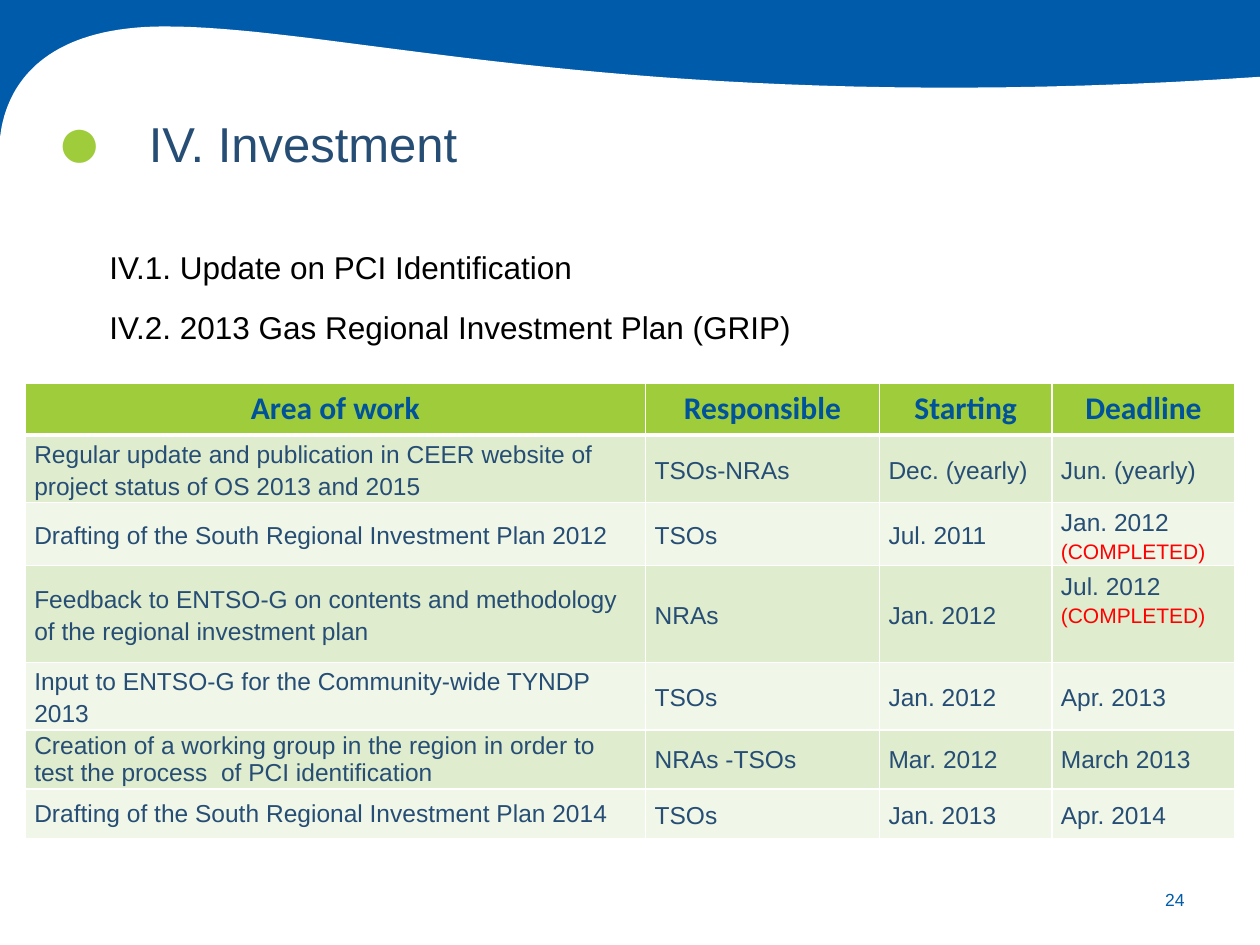
"""Build the Investment work plan slide with its schedule table."""
from lxml.etree import SubElement
from pptx import Presentation
from pptx.dml.color import RGBColor
from pptx.enum.shapes import MSO_SHAPE
from pptx.enum.text import MSO_ANCHOR, PP_ALIGN
from pptx.oxml.ns import qn
from pptx.util import Pt

BLUE = RGBColor(0x00, 0x5B, 0xAB)
HEADER_BLUE = RGBColor(0x00, 0x52, 0x9B)
NAVY = RGBColor(0x26, 0x4D, 0x74)
GREEN = RGBColor(0x9E, 0xCC, 0x3B)
BANDS = RGBColor(0xDF, 0xEC, 0xCE), RGBColor(0xF0, 0xF6, 0xE8)
RED = RGBColor(0xFF, 0x00, 0x00)
BLACK = RGBColor(0x00, 0x00, 0x00)
WHITE = RGBColor(0xFF, 0xFF, 0xFF)

WIDTH, HEIGHT = 720, 540
TITLE = "IV. Investment"
TOPICS = [
    "IV.1. Update on PCI Identification",
    "IV.2. 2013 Gas Regional Investment Plan (GRIP)",
]
DONE = "(COMPLETED)"
HEADINGS = ["Area of work", "Responsible", "Starting", "Deadline"]
TASKS = [
    ("Regular update and publication in CEER website of project status of OS 2013 and 2015",
     "TSOs-NRAs", "Dec. (yearly)", "Jun. (yearly)"),
    ("Drafting of the South Regional Investment Plan 2012",
     "TSOs", "Jul. 2011", "Jan. 2012 " + DONE),
    ("Feedback to ENTSO-G on contents and methodology of the regional investment plan",
     "NRAs", "Jan. 2012", "Jul. 2012\n" + DONE),
    ("Input to ENTSO-G for the Community-wide TYNDP 2013",
     "TSOs", "Jan. 2012", "Apr. 2013"),
    ("Creation of a working group in the region in order to test the process  of PCI identification",
     "NRAs -TSOs", "Mar. 2012", "March 2013"),
    ("Drafting of the South Regional Investment Plan 2014",
     "TSOs", "Jan. 2013", "Apr. 2014"),
]
SINGLE_SPACED = {(5, 0), (5, 1), (5, 2), (5, 3), (6, 0)}
COLUMN_WIDTHS = [354.5, 133.7, 98.5, 104.8]
ROW_HEIGHTS = [29.5, 38, 36, 55.3, 38.7, 33.7, 28.6]
WAVE = [
    ((0, 79.2), (2.2, 56.9), (16.6, 15.1), (94.3, 15.1)),
    ((94.3, 15.1), (198.7, 15.1), (367.2, 67.7), (720, 43.9)),
]


def curve_points(curve, steps=40):
    for step in range(steps + 1):
        t = step / steps
        weights = (1 - t) ** 3, 3 * t * (1 - t) ** 2, 3 * t * t * (1 - t), t ** 3
        yield tuple(Pt(sum(w * p[axis] for w, p in zip(weights, curve))) for axis in (0, 1))


def paint(shape, color):
    shape.shadow.inherit = False
    shape.fill.solid()
    shape.fill.fore_color.rgb = color
    shape.line.fill.background()


def set_font(font, size, color, name="Arial", bold=False):
    font.size, font.name, font.bold = Pt(size), name, bold
    font.color.rgb = color


def add_text(slide, box, lines, size, color, align, anchor=MSO_ANCHOR.TOP, wrap=True, spacing=None):
    frame = slide.shapes.add_textbox(*map(Pt, box)).text_frame
    frame.word_wrap, frame.vertical_anchor = wrap, anchor
    frame.text = "\n".join(lines)
    for index, paragraph in enumerate(frame.paragraphs):
        paragraph.alignment = align
        if spacing:
            paragraph.line_spacing, paragraph.space_after = spacing, Pt(2)
            paragraph.space_before = Pt(6 if index else 0)
        set_font(paragraph.font, size, color)


def add_borders(cell, widths):
    properties = cell._tc.get_or_add_tcPr()
    for side, width in widths.items():
        line = SubElement(properties, qn("a:ln" + side), w=str(Pt(width)))
        SubElement(SubElement(line, qn("a:solidFill")), qn("a:srgbClr"), val=str(WHITE))


def fill_task_cell(cell, text, spacing):
    cell.margin_left = cell.margin_right = Pt(5.2)
    cell.margin_top = cell.margin_bottom = 0
    cell.vertical_anchor = MSO_ANCHOR.MIDDLE
    if "\n" in text:
        cell.vertical_anchor, cell.margin_top = MSO_ANCHOR.TOP, Pt(2)
    frame = cell.text_frame
    for index, line in enumerate(text.split("\n")):
        paragraph = frame.add_paragraph() if index else frame.paragraphs[0]
        paragraph.line_spacing = spacing
        date, mark, _ = line.partition(DONE)
        for part, size, color in ((date, 14, NAVY), (mark, 12, RED)):
            if part:
                run = paragraph.add_run()
                run.text = part
                set_font(run.font, size, color)


def add_schedule(slide):
    rows = [HEADINGS, *TASKS]
    table = slide.shapes.add_table(
        len(rows), len(HEADINGS), Pt(14.4), Pt(219.1),
        Pt(sum(COLUMN_WIDTHS)), Pt(sum(ROW_HEIGHTS))).table
    for column, width in zip(table.columns, COLUMN_WIDTHS):
        column.width = Pt(width)
    for row, height in zip(table.rows, ROW_HEIGHTS):
        row.height = Pt(height)
    for r, texts in enumerate(rows):
        for c, text in enumerate(texts):
            cell = table.cell(r, c)
            add_borders(cell, {"L": 1, "R": 1, "T": 3 if r == 1 else 1, "B": 1 if r else 3})
            cell.fill.solid()
            cell.fill.fore_color.rgb = BANDS[(r - 1) % 2] if r else GREEN
            if r:
                fill_task_cell(cell, text, 1.0 if (r, c) in SINGLE_SPACED else 1.15)
            else:
                cell.text = text
                heading = cell.text_frame.paragraphs[0]
                heading.alignment = PP_ALIGN.CENTER
                set_font(heading.font, 18, HEADER_BLUE, "Calibri", True)


def main():
    deck = Presentation()
    deck.slide_width, deck.slide_height = Pt(WIDTH), Pt(HEIGHT)
    slide = deck.slides.add_slide(deck.slide_layouts[6])

    banner = slide.shapes.add_shape(MSO_SHAPE.RECTANGLE, 0, 0, Pt(WIDTH), Pt(82.8))
    paint(banner, BLUE)
    edge = [point for curve in WAVE for point in curve_points(curve)]
    page = slide.shapes.build_freeform(*edge[0])
    page.add_line_segments(edge[1:] + [(Pt(WIDTH), Pt(HEIGHT)), (0, Pt(HEIGHT))])
    paint(page.convert_to_shape(), WHITE)

    add_text(slide, (643.7, 499.7, 40.3, 28.8), ["24"], 10, BLUE, PP_ALIGN.RIGHT, MSO_ANCHOR.MIDDLE)
    add_text(slide, (25.2, 41, 39.6, 67.7), ["●"], 44, GREEN, PP_ALIGN.CENTER, MSO_ANCHOR.BOTTOM, False)
    add_text(slide, (78, 54.7, 610, 44), [TITLE], 28, NAVY, PP_ALIGN.JUSTIFY, spacing=1.2)
    add_schedule(slide)
    add_text(slide, (55.4, 134, 612, 102), TOPICS, 18, BLACK, PP_ALIGN.LEFT, spacing=1.2)
    deck.save("out.pptx")


if __name__ == "__main__":
    main()
